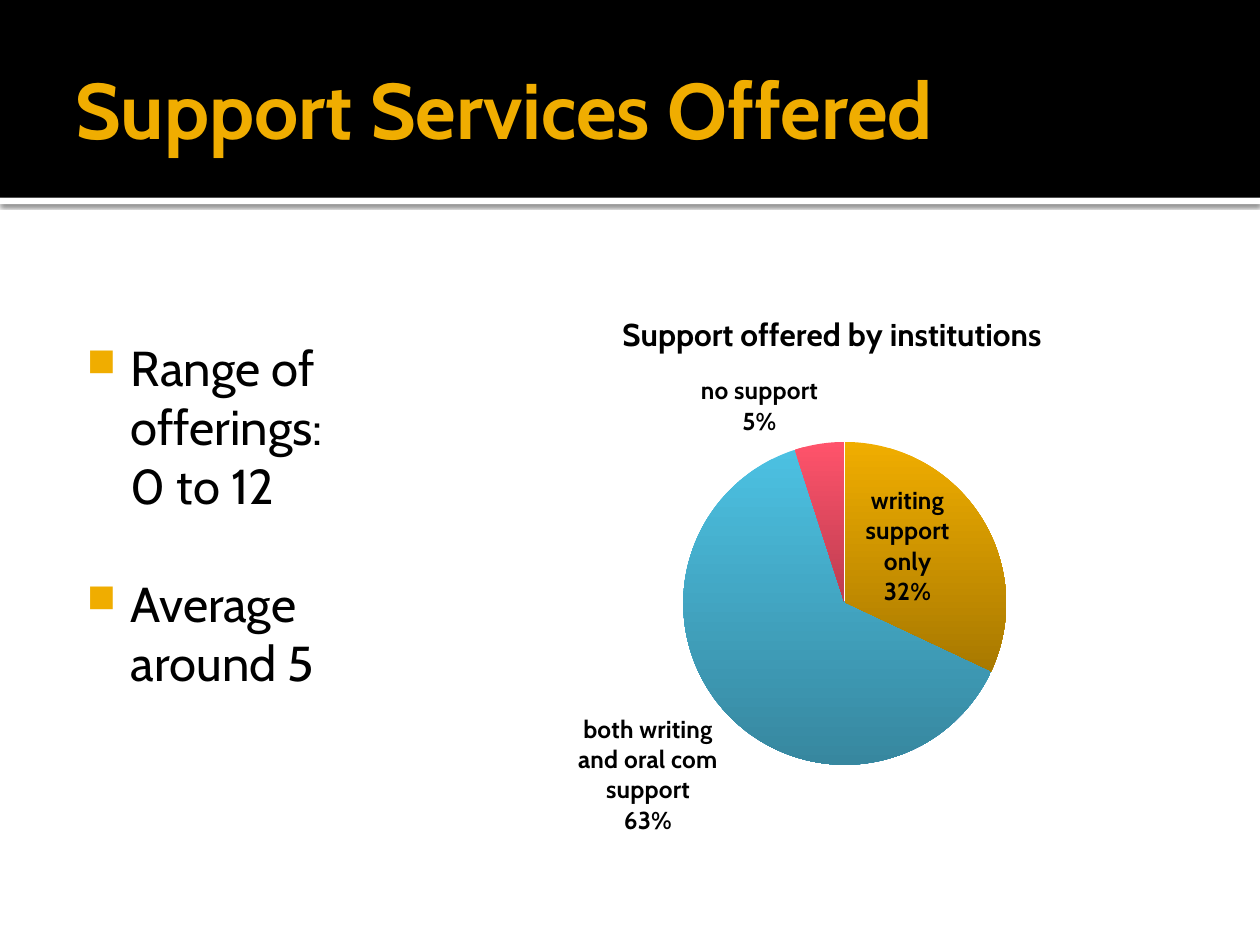
from dataclasses import dataclass

from pptx import Presentation
from pptx.chart.data import CategoryChartData as Data
from pptx.dml.color import RGBColor as RGB
from pptx.enum.chart import XL_CHART_TYPE as Kind, XL_LABEL_POSITION as Spot
from pptx.enum.shapes import MSO_SHAPE as Form
from pptx.enum.text import MSO_ANCHOR as Anchor
from pptx.oxml import parse_xml as to_xml
from pptx.oxml.ns import nsdecls, qn
from pptx.util import Inches, Pt


@dataclass(frozen=True)
class Theme:
    """Colours, font and type sizes of the slide."""
    font: str = "Cabin"
    gold: str = "F0AD00"
    black: str = "000000"
    white: str = "FFFFFF"
    head: int = 45
    body: int = 28
    title: int = 18
    label: int = 14
    slices: tuple = (("F0AD00", "A87900"), ("4CC1E2", "37879F"),
                     ("FF536B", "BC3D50"))


THEME = Theme()


def style(font, size, color=THEME.black, bold=False):
    """Set the face, size, colour and weight of a font."""
    font.name, font.size, font.bold = THEME.font, Pt(size), bold
    font.color.rgb = RGB.from_string(color)


def write(para, text, bullet=False, indent=0, gap=0, **look):
    """Put formatted text in a paragraph, with an optional bullet."""
    run = para.add_run()
    run.text = text
    style(run.font, **look)
    para.space_before = Pt(gap)
    props = para._p.get_or_add_pPr()
    props.set("marL", str(Inches(indent)))
    props.set("indent", str(Inches(-0.35 if bullet else 0)))
    if bullet:
        for part in (f'buClr {nsdecls("a")}><a:srgbClr val="{THEME.gold}"/></a:buClr',
                     f'buSzPct {nsdecls("a")} val="80000"/',
                     f'buChar {nsdecls("a")} char="■"/'):
            props.append(to_xml(f"<a:{part}>"))


def add_box(slide, place, pads, anchor=Anchor.TOP):
    """Add a wrapping text box and return its frame."""
    frame = slide.shapes.add_textbox(*map(Inches, place)).text_frame
    frame.word_wrap = True
    frame.vertical_anchor = anchor
    (frame.margin_left, frame.margin_top,
     frame.margin_right, frame.margin_bottom) = map(Inches, pads)
    return frame


def add_band(slide, top, height, color):
    """Add a plain band across the slide."""
    band = slide.shapes.add_shape(
        Form.RECTANGLE, 0, Inches(top), Inches(10), Inches(height))
    band.shadow.inherit = False
    band.fill.solid()
    band.fill.fore_color.rgb = RGB.from_string(color)
    band.line.fill.background()
    return band


def add_shade(shape):
    """Cast a soft shadow below a shape."""
    effects = shape._element.spPr.find(qn("a:effectLst"))
    effects.append(to_xml(
        f'<a:outerShdw {nsdecls("a")} blurRad="{Pt(2.5)}" dist="{Pt(0.8)}" '
        f'dir="5400000" algn="tl" rotWithShape="0"><a:srgbClr val="{THEME.black}">'
        '<a:alpha val="60000"/></a:srgbClr></a:outerShdw>'))


def set_layout(node, index, inner=False, **place):
    """Fix the place of a chart part as shares of the chart."""
    for old in node.findall(qn("c:layout")):
        node.remove(old)
    target = '<c:layoutTarget val="inner"/>' if inner else ""
    modes = "".join(f'<c:{key}Mode val="edge"/>' for key in "xy")
    sizes = "".join(f'<c:{key} val="{val}"/>' for key, val in place.items())
    node.insert(index, to_xml(
        f'<c:layout {nsdecls("c")}><c:manualLayout>{target}{modes}{sizes}'
        '</c:manualLayout></c:layout>'))


def add_labels(plot):
    """Show category and percent on separate lines."""
    plot.has_data_labels = True
    labels = plot.data_labels
    style(labels.font, THEME.label, bold=True)
    labels.number_format, labels.number_format_is_linked = "0%", False
    labels.show_value = False
    labels.show_category_name = labels.show_percentage = True
    labels.position = Spot.BEST_FIT
    last = labels._element.find(qn("c:showBubbleSize"))
    last.addnext(to_xml(f'<c:separator {nsdecls("c")}>\n</c:separator>'))


def add_pie(slide, title, shares):
    """Add the pie chart with its title, colours and labels."""
    data = Data(number_format="0")
    data.categories = list(shares)
    data.add_series("Series 1", list(shares.values()))
    place = map(Inches, (3.25, 2.25, 6.58, 4.66))
    chart = slide.shapes.add_chart(Kind.PIE, *place, data).chart
    style(chart.font, 10)
    chart.has_legend = False
    chart.has_title = True
    head = chart.chart_title
    write(head.text_frame.paragraphs[0], title, size=THEME.title, bold=True)
    set_layout(head._element, 1, x=0.25, y=0.04)
    set_layout(chart._chartSpace.chart.plotArea, 0, inner=True,
               x=0.33, y=0.27, w=0.39, h=0.55)
    plot = chart.plots[0]
    plot.vary_by_categories = True
    for index, pair in enumerate(THEME.slices):
        form = plot.series[0].points[index].format
        form.line.fill.background()
        form.fill.gradient()
        form.fill.gradient_angle = 270
        for stop, color in zip(form.fill.gradient_stops, pair):
            stop.color.rgb = RGB.from_string(color)
    add_labels(plot)


def main():
    """Build the slide and save it."""
    deck = Presentation()
    deck.slide_width, deck.slide_height = Inches(10), Inches(7.5)
    slide = deck.slides.add_slide(deck.slide_layouts[6])
    add_shade(add_band(slide, 1.57, 0.05, THEME.white))
    add_band(slide, 0, 1.57, THEME.black)
    head = add_box(slide, (0.5, 0.17, 9, 1.37), (0.1, 0.05, 0.05, 0.05),
                   Anchor.MIDDLE)
    write(head.paragraphs[0], "Support Services Offered",
          size=THEME.head, color=THEME.gold, bold=True)
    body = add_box(slide, (0.5, 2.58, 3, 4), (0.06, 0.1, 0.1, 0.05))
    lines = (("Range of offerings:", True, 0), ("0 to 12", False, 0),
             ("Average around 5", True, 34))
    for index, (text, bullet, gap) in enumerate(lines):
        para = body.add_paragraph() if index else body.paragraphs[0]
        write(para, text, bullet, indent=0.48, gap=gap, size=THEME.body)
    add_pie(slide, "Support offered by institutions",
            {"writing support only": 32,
             "both writing and oral com support": 63,
             "no support": 5})
    deck.save("out.pptx")


if __name__ == "__main__":
    main()
